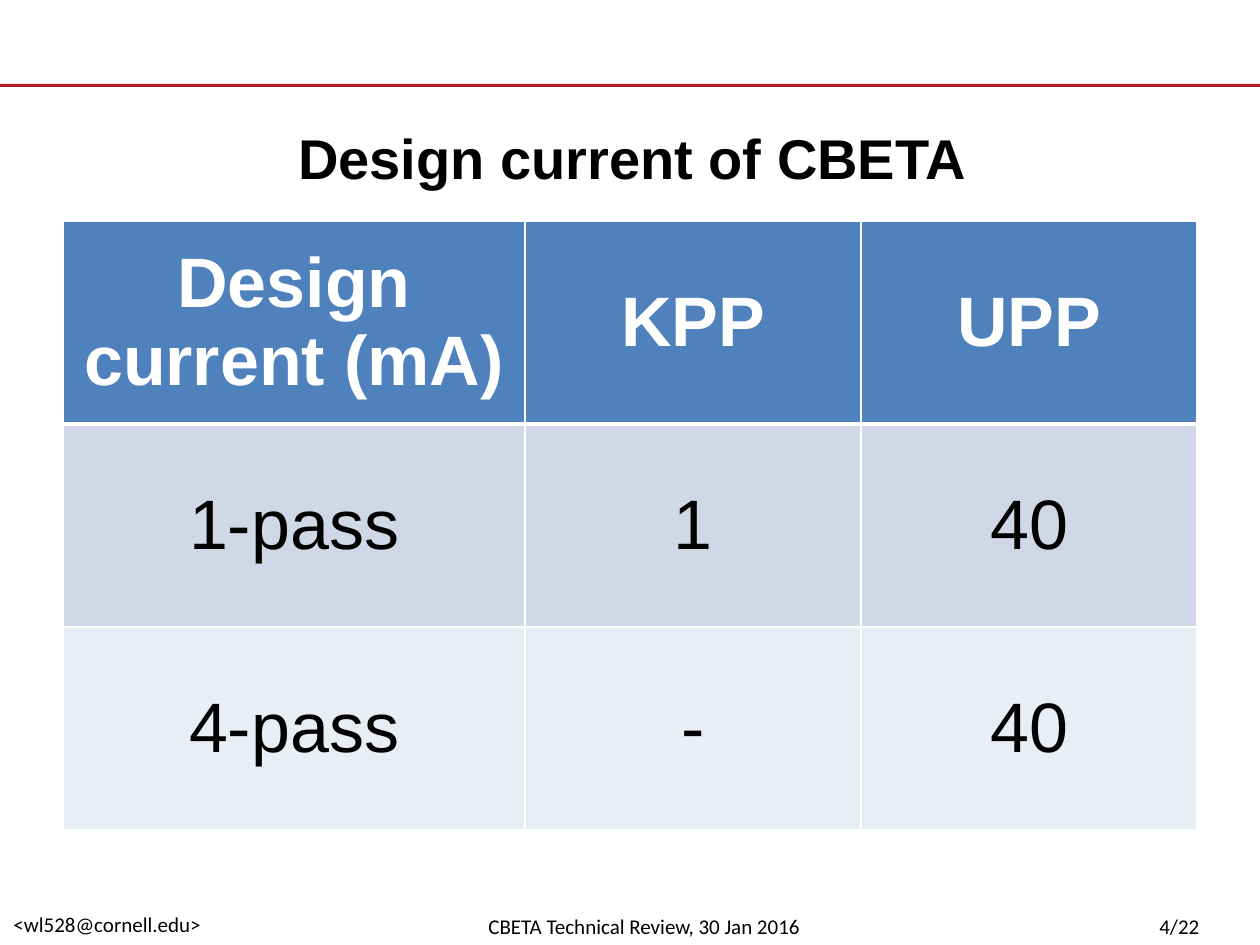
from pptx import Presentation
from pptx.dml.color import RGBColor as RGB
from pptx.enum.shapes import MSO_SHAPE as Shape
from pptx.enum.text import MSO_ANCHOR as Anchor, PP_ALIGN as Align
from pptx.oxml import parse_xml
from pptx.oxml.ns import nsdecls
from pptx.util import Emu, Pt


class Theme:
    black, white, rule = "000000", "FFFFFF", "B21F22"
    header, bands = "4F81BD", ["D0D8E8", "E9EDF4"]
    title_size, table_size, footer_size = 32, 40, 12
    body_font, footer_font = "Arial", "Calibri"


def px(*lengths):
    return [Emu(round(length * 914400 / 126)) for length in lengths]


def style(paragraph, font_name, size, color, bold=False):
    font = paragraph.font
    font.name, font.size, font.bold = font_name, Pt(size), bold
    font.color.rgb = RGB.from_string(color)


deck = Presentation()
deck.slide_width, deck.slide_height = px(1260, 945)
slide = deck.slides.add_slide(deck.slide_layouts[5])

# Footer: address, meeting, page number
footer = [
    ("<wl528@cornell.edu>", 1, 905, 257),
    ("CBETA Technical Review, 30 Jan 2016", 476, 907, 330),
    ("4/22", 1147, 907, 113),
]
for wording, left, top, width in footer:
    note = slide.shapes.add_textbox(*px(left, top, width, 38)).text_frame
    note.word_wrap = True
    note.margin_right = 0
    note.text = wording
    style(note.paragraphs[0], Theme.footer_font, Theme.footer_size, Theme.black)

# Red rule under the top margin
rule = slide.shapes.add_shape(Shape.RECTANGLE, *px(0, 84, 1260, 3))
rule.shadow.inherit = False
rule.fill.solid()
rule.fill.fore_color.rgb = RGB.from_string(Theme.rule)
rule.line.fill.background()

# Title
title = slide.shapes.title
title.left, title.top, title.width, title.height = px(262, 116, 741, 82)
heading = title.text_frame
heading.text = "Design current of CBETA"
heading.vertical_anchor = Anchor.MIDDLE
heading.margin_left = heading.margin_right = 0
heading.margin_top = heading.margin_bottom = 0
heading.paragraphs[0].alignment = Align.CENTER
style(heading.paragraphs[0], Theme.body_font, Theme.title_size, Theme.black, True)

# Design current table
currents = [
    ["Design current (mA)", "KPP", "UPP"],
    ["1-pass", "1", "40"],
    ["4-pass", "-", "40"],
]
table = slide.shapes.add_table(3, 3, *px(63, 221, 1134, 609)).table
for column, width in zip(table.columns, px(462, 336, 336)):
    column.width = width
for row in table.rows:
    row.height = px(203)[0]

for r, values in enumerate(currents):
    is_header = r == 0
    fill = Theme.header if is_header else Theme.bands[r - 1]
    ink = Theme.white if is_header else Theme.black
    # The line between header and body is three points wide
    borders = {"lnL": 1, "lnR": 1, "lnT": 3 if r == 1 else 1, "lnB": 3 if is_header else 1}
    for c, value in enumerate(values):
        cell = table.cell(r, c)
        cell.text = value
        cell.vertical_anchor = Anchor.MIDDLE
        paragraph = cell.text_frame.paragraphs[0]
        paragraph.alignment = Align.CENTER
        style(paragraph, Theme.body_font, Theme.table_size, ink, is_header)
        cell.fill.solid()
        cell.fill.fore_color.rgb = RGB.from_string(fill)
        properties = cell._tc.get_or_add_tcPr()
        for position, (side, points) in enumerate(borders.items()):
            properties.insert(position, parse_xml(
                f'<a:{side} {nsdecls("a")} w="{Pt(points)}"><a:solidFill>'
                f'<a:srgbClr val="{Theme.white}"/></a:solidFill></a:{side}>'))

deck.save("out.pptx")
